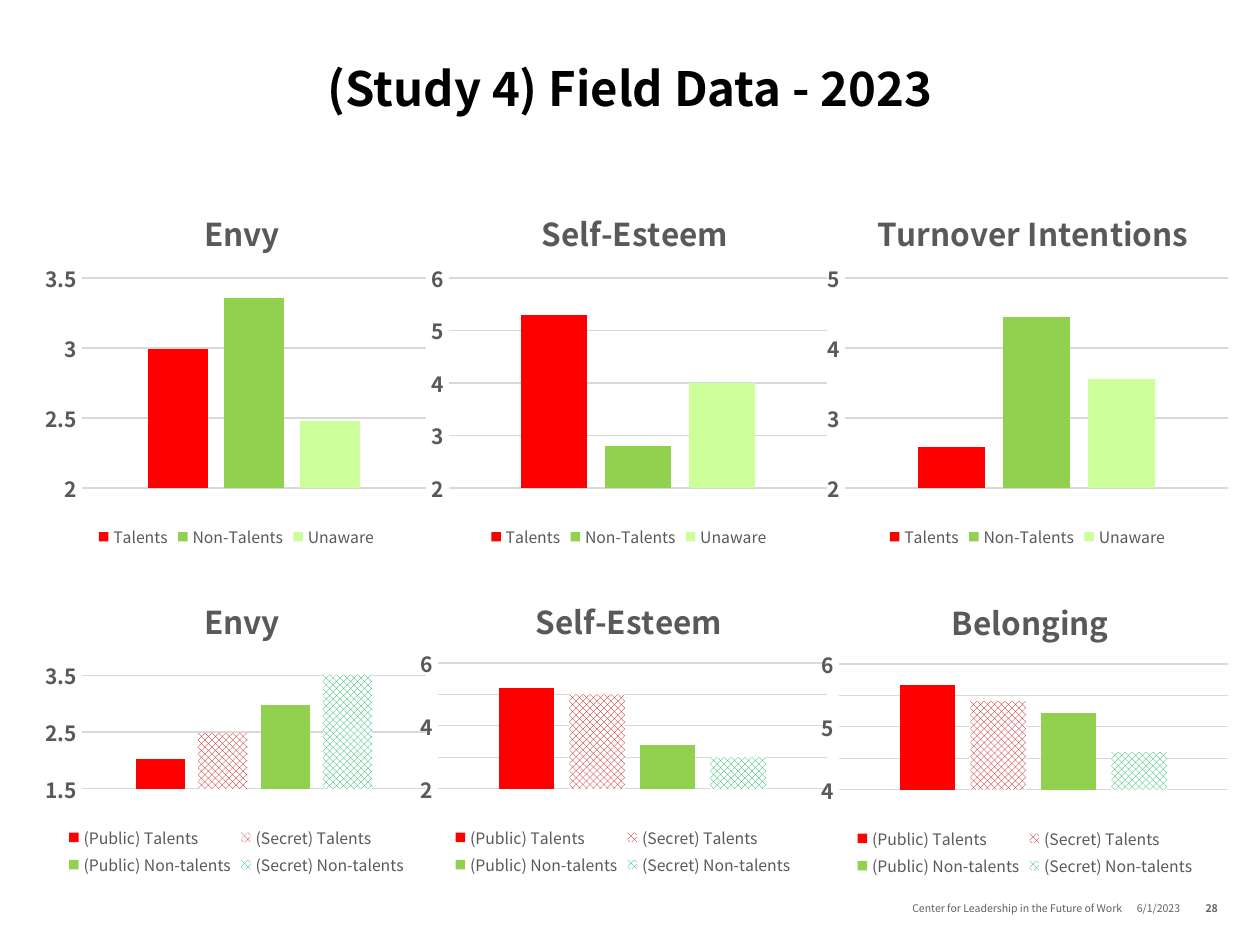
"""Build the field data slide: two rows of three column charts."""
from lxml import etree
from pptx import Presentation
from pptx.chart.data import CategoryChartData
from pptx.dml.color import RGBColor
from pptx.enum.chart import XL_CHART_TYPE, XL_LEGEND_POSITION, XL_TICK_MARK
from pptx.enum.dml import MSO_PATTERN
from pptx.enum.text import MSO_ANCHOR, MSO_AUTO_SIZE, PP_ALIGN
from pptx.oxml.ns import qn
from pptx.util import Pt

PX = 914400 // 126
FONT = "Noto Sans CJK KR"
GREY, RULE = "595959", "D9D9D9"

HEAD = "(Study 4) Field Data - 2023"
GROUPS = [("Talents", "FF0000", False), ("Non-Talents", "92D050", False),
          ("Unaware", "CCFF99", False)]
PAIRS = [("(Public) Talents", "FF0000", False), ("(Secret) Talents", "C00000", True),
         ("(Public) Non-talents", "92D050", False), ("(Secret) Non-talents", "00B050", True)]

# title, title width, chart box, plot box, (min, max, step), values
ROWS = [
    (GROUPS, [
        ("Envy", 76, (38, 175, 397, 378), (82, 278, 344, 210), (2, 3.5, 0.5), (2.99, 3.36, 2.48)),
        ("Self-Esteem", 186, (423, 175, 412, 378), (449, 278, 378, 210), (2, 6, 1), (5.3, 2.8, 4)),
        ("Turnover Intentions", 312, (819, 175, 417, 378), (845, 278, 383, 210), (2, 5, 1),
         (2.58, 4.44, 3.56)),
    ]),
    (PAIRS, [
        ("Envy", 76, (38, 563, 397, 318), (82, 647, 344, 142), (1.5, 4, 1),
         (2.02, 2.48, 2.98, 3.51)),
        ("Self-Esteem", 186, (412, 563, 422, 318), (438, 663, 389, 126), (2, 6, 1),
         (5.2, 5, 3.4, 3)),
        ("Belonging", 158, (814, 564, 422, 318), (839, 664, 389, 126), (4, 6, 0.5),
         (5.67, 5.41, 5.22, 4.6)),
    ]),
]
NOTES = [
    ("6/1/2023", (1129, 890, 59, 25), PP_ALIGN.CENTER, False),
    ("Center for Leadership in the Future of Work", (712, 890, 410, 25), PP_ALIGN.RIGHT, False),
    ("28", (1188, 890, 30, 25), PP_ALIGN.RIGHT, True),
]


def rgb(code):
    return RGBColor.from_string(code)


def style(font, size, color, bold=False):
    font.name, font.size, font.bold = FONT, Pt(size), bold
    font.color.rgb = rgb(color)


def emu(box):
    return [n * PX for n in box]


def write(shape, text, size, color, bold, align, anchor):
    frame = shape.text_frame
    frame.text = text
    frame.word_wrap = True
    frame.auto_size = MSO_AUTO_SIZE.NONE
    frame.vertical_anchor = anchor
    frame.margin_left = frame.margin_right = frame.margin_top = frame.margin_bottom = 0
    para = frame.paragraphs[0]
    para.alignment = align
    style(para.runs[0].font, size, color, bold)
    return para


def place(node, before, **parts):
    for old in node.findall(qn("c:layout")):
        node.remove(old)
    layout = etree.Element(qn("c:layout"))
    manual = etree.SubElement(layout, qn("c:manualLayout"))
    for tag, val in parts.items():
        etree.SubElement(manual, qn("c:" + tag)).set("val", str(val))
    node.find(qn(before)).addprevious(layout)


def paint(fill, color, hatch):
    if hatch:
        fill.patterned()
        fill.pattern = MSO_PATTERN.LARGE_CHECKER_BOARD
        fill.fore_color.rgb, fill.back_color.rgb = rgb(color), rgb("FFFFFF")
    else:
        fill.solid()
        fill.fore_color.rgb = rgb(color)


def draw(slide, groups, name, span, box, plot, scale, vals):
    data = CategoryChartData()
    data.categories = ["1"]
    for (label, _, _), val in zip(groups, vals):
        data.add_series(label, [val])
    chart = slide.shapes.add_chart(XL_CHART_TYPE.COLUMN_CLUSTERED, *emu(box), data).chart
    style(chart.font, 10, "000000")

    chart.has_title = True
    title = chart.chart_title
    title.include_in_layout = False
    title.text_frame.text = name
    style(title.text_frame.paragraphs[0].runs[0].font, 18, GREY, True)
    left, top, wide, high = box
    place(title._element, "c:overlay", xMode="edge", yMode="edge",
          x=round((wide - span) / 2 / wide, 4), y=round(25 / high, 4))
    x, y, w, h = plot
    place(chart._chartSpace.chart.plotArea, "c:barChart", layoutTarget="inner",
          xMode="edge", yMode="edge", x=round((x - left) / wide, 4),
          y=round((y - top) / high, 4), w=round(w / wide, 4), h=round(h / high, 4))

    chart.has_legend = True
    chart.legend.position = XL_LEGEND_POSITION.BOTTOM
    chart.legend.include_in_layout = False
    style(chart.legend.font, 9, GREY)

    chart.category_axis.visible = False
    axis = chart.value_axis
    axis.minimum_scale, axis.maximum_scale, axis.major_unit = scale
    axis.major_tick_mark = axis.minor_tick_mark = XL_TICK_MARK.NONE
    axis.format.line.fill.background()
    style(axis.tick_labels.font, 12, GREY, True)
    line = axis.major_gridlines.format.line
    line.color.rgb, line.width = rgb(RULE), Pt(0.75)

    bars = chart.plots[0]
    bars.vary_by_categories = False
    bars.gap_width, bars.overlap = 219, -27
    for series, (_, color, hatch) in zip(bars.series, groups):
        paint(series.format.fill, color, hatch)


def main():
    prs = Presentation()
    prs.slide_width, prs.slide_height = emu((1260, 945))
    slide = prs.slides.add_slide(prs.slide_layouts[5])
    title = slide.shapes.title
    title.left, title.top, title.width, title.height = emu((42, 66, 1176, 79))
    para = write(title, HEAD, 27, "000000", True, PP_ALIGN.CENTER, MSO_ANCHOR.TOP)
    para.line_spacing, para.space_after = 0.9, Pt(4.5)
    for groups, charts in ROWS:
        for chart in charts:
            draw(slide, groups, *chart)
    for text, box, align, bold in NOTES:
        note = slide.shapes.add_textbox(*emu(box))
        write(note, text, 6, "626262", bold, align, MSO_ANCHOR.BOTTOM)
    prs.save("out.pptx")


if __name__ == "__main__":
    main()
